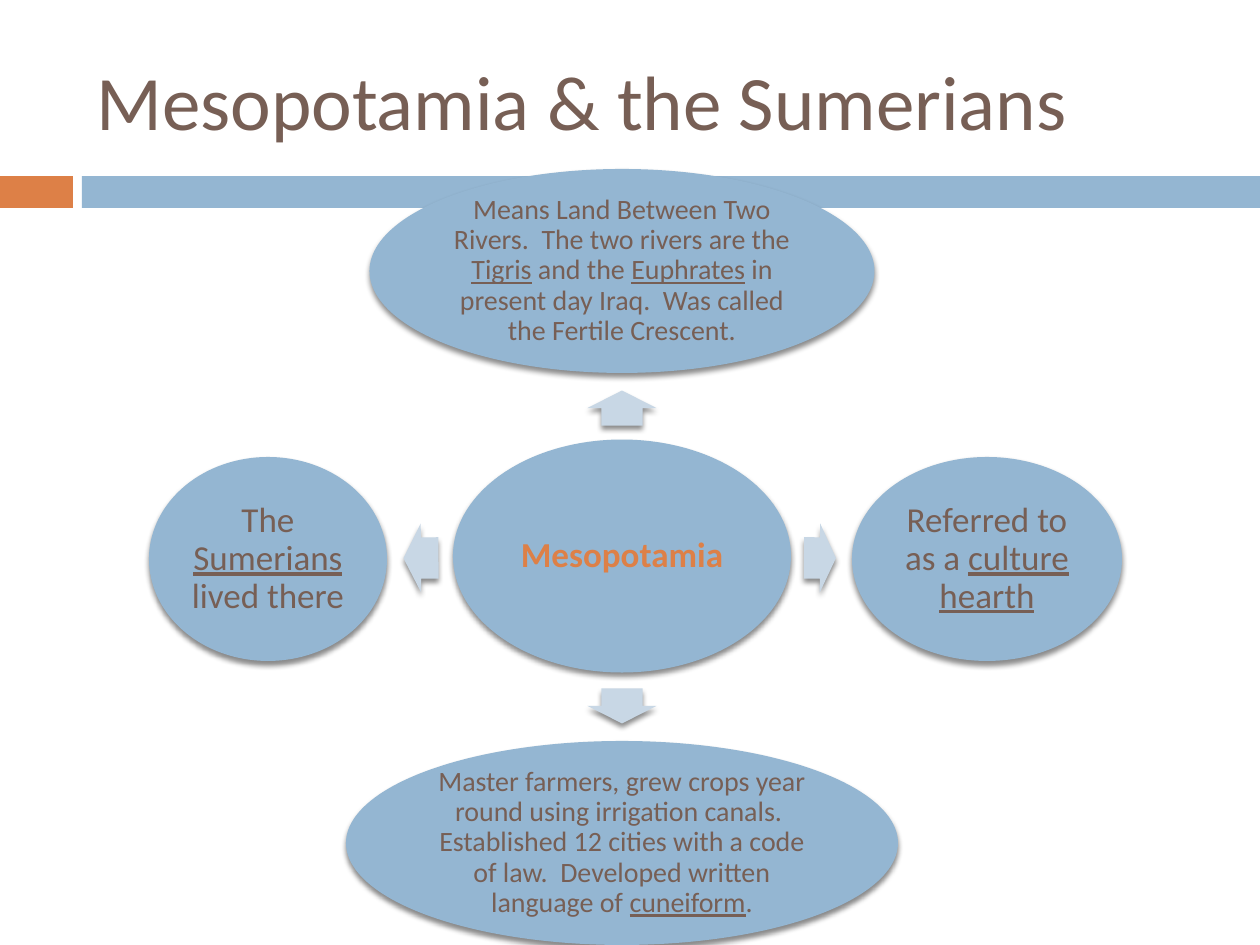
from dataclasses import dataclass

import lxml.etree
import pptx
import pptx.dml.color
import pptx.enum.shapes
import pptx.enum.text
import pptx.oxml
import pptx.oxml.ns
import pptx.util

SHAPE = pptx.enum.shapes.MSO_SHAPE
ALIGN = pptx.enum.text.PP_ALIGN
EMU_PER_PX = 914400 / 126


@dataclass(frozen=True)
class Theme:
    font: str = "Calibri"
    brown: str = "775F55"
    blue: str = "94B6D2"
    pale: str = "C8D7E5"
    orange: str = "DD8047"
    title_size: int = 44
    large_size: int = 20
    small_size: int = 16


THEME = Theme()


@dataclass(frozen=True)
class Span:
    text: str
    underline: bool = False


@dataclass(frozen=True)
class Bubble:
    center_x: int
    center_y: int
    width: int
    height: int
    spans: tuple[Span, ...]
    size: int
    color: str = THEME.brown
    bold: bool = False


@dataclass(frozen=True)
class Arrow:
    center_x: int
    center_y: int
    rotation: float
    length: int = 35
    breadth: int = 69


def px(value: float) -> pptx.util.Emu:
    return pptx.util.Emu(round(value * EMU_PER_PX))


def rgb(color: str) -> pptx.dml.color.RGBColor:
    return pptx.dml.color.RGBColor.from_string(color)


def write(shape, spans, size: int, color: str, align, inset: float, bold: bool = False):
    """Fill a shape with one vertically centred paragraph."""
    frame = shape.text_frame
    frame.word_wrap = True
    frame.vertical_anchor = pptx.enum.text.MSO_ANCHOR.MIDDLE
    frame.margin_left = frame.margin_right = pptx.util.Inches(inset)
    frame.margin_top = frame.margin_bottom = pptx.util.Inches(min(inset, 0.05))
    para = frame.paragraphs[0]
    para.alignment = align
    para.font.name = THEME.font
    para.font.size = pptx.util.Pt(size)
    para.font.bold = bold
    para.font.color.rgb = rgb(color)
    for span in spans:
        run = para.add_run()
        run.text = span.text
        if span.underline:
            run.font.underline = True
    return para


def add_block(page, kind, left, top, width, height, color: str):
    """Add a plain filled shape without outline or shadow."""
    shape = page.shapes.add_shape(kind, px(left), px(top), px(width), px(height))
    shape.fill.solid()
    shape.fill.fore_color.rgb = rgb(color)
    shape.line.fill.background()
    shape.shadow.inherit = False
    return shape


def add_shadow(shape) -> None:
    """Give a shape a soft shadow falling straight down."""
    effects = shape._element.spPr.find(pptx.oxml.ns.qn("a:effectLst"))
    effects.append(pptx.oxml.parse_xml(
        f'<a:outerShdw {pptx.oxml.ns.nsdecls("a")} blurRad="38100" dist="30480" '
        'dir="5400000" rotWithShape="0"><a:srgbClr val="000000">'
        '<a:alpha val="45000"/></a:srgbClr></a:outerShdw>'))


def add_bubble(page, bubble: Bubble) -> None:
    shape = add_block(page, SHAPE.OVAL, bubble.center_x - bubble.width / 2,
                      bubble.center_y - bubble.height / 2,
                      bubble.width, bubble.height, THEME.blue)
    add_shadow(shape)
    para = write(shape, bubble.spans, bubble.size, bubble.color, ALIGN.CENTER,
                 0.02 if bubble.size == THEME.small_size else 0.03, bubble.bold)
    para.line_spacing = 0.9


def add_arrow(page, arrow: Arrow) -> None:
    shape = add_block(page, SHAPE.RIGHT_ARROW, arrow.center_x - arrow.length / 2,
                      arrow.center_y - arrow.breadth / 2,
                      arrow.length, arrow.breadth, THEME.pale)
    shape.adjustments[0] = 0.6
    shape.adjustments[1] = 0.5
    shape.rotation = arrow.rotation
    add_shadow(shape)


BUBBLES = (
    Bubble(622, 556, 338, 233, (Span("Mesopotamia"),),
           THEME.large_size, THEME.orange, True),
    Bubble(622, 271, 505, 204, (
        Span("Means Land Between Two Rivers.  The two rivers are the "),
        Span("Tigris", True), Span(" and the "), Span("Euphrates", True),
        Span(" in present day Iraq.  Was called the Fertile Crescent."),
    ), THEME.small_size),
    Bubble(987, 559, 270, 204, (
        Span("Referred to as a "), Span("culture", True),
        Span(" "), Span("hearth", True),
    ), THEME.large_size),
    Bubble(622, 843, 552, 204, (
        Span("Master farmers, grew crops year round using irrigation canals.  "
             "Established 12 cities with a code of law.  "
             "Developed written language of "),
        Span("cuneiform", True), Span("."),
    ), THEME.small_size),
    Bubble(268, 559, 238, 204, (
        Span("The "), Span("Sumerians", True), Span(" lived there"),
    ), THEME.large_size),
)

ARROWS = (
    Arrow(622, 408, 270),
    Arrow(820, 558, 0.4, length=32),
    Arrow(622, 706, 90),
    Arrow(421, 558, 179.6),
)


def main() -> None:
    deck = pptx.Presentation()
    deck.slide_width, deck.slide_height = px(1260), px(945)
    page = deck.slides.add_slide(deck.slide_layouts[6])

    # Band under the title
    add_block(page, SHAPE.RECTANGLE, 0, 176, 73, 32, THEME.orange)
    add_block(page, SHAPE.RECTANGLE, 82, 176, 1178, 32, THEME.blue)

    # Title
    box = page.shapes.add_textbox(px(84), px(32), px(1124), px(136))
    write(box, (Span("Mesopotamia & the Sumerians"),), THEME.title_size,
          THEME.brown, ALIGN.LEFT, 0.1)

    # Hub, facts around it and the arrows between
    for bubble in BUBBLES:
        add_bubble(page, bubble)
    for arrow in ARROWS:
        add_arrow(page, arrow)

    deck.save("out.pptx")


if __name__ == "__main__":
    main()
